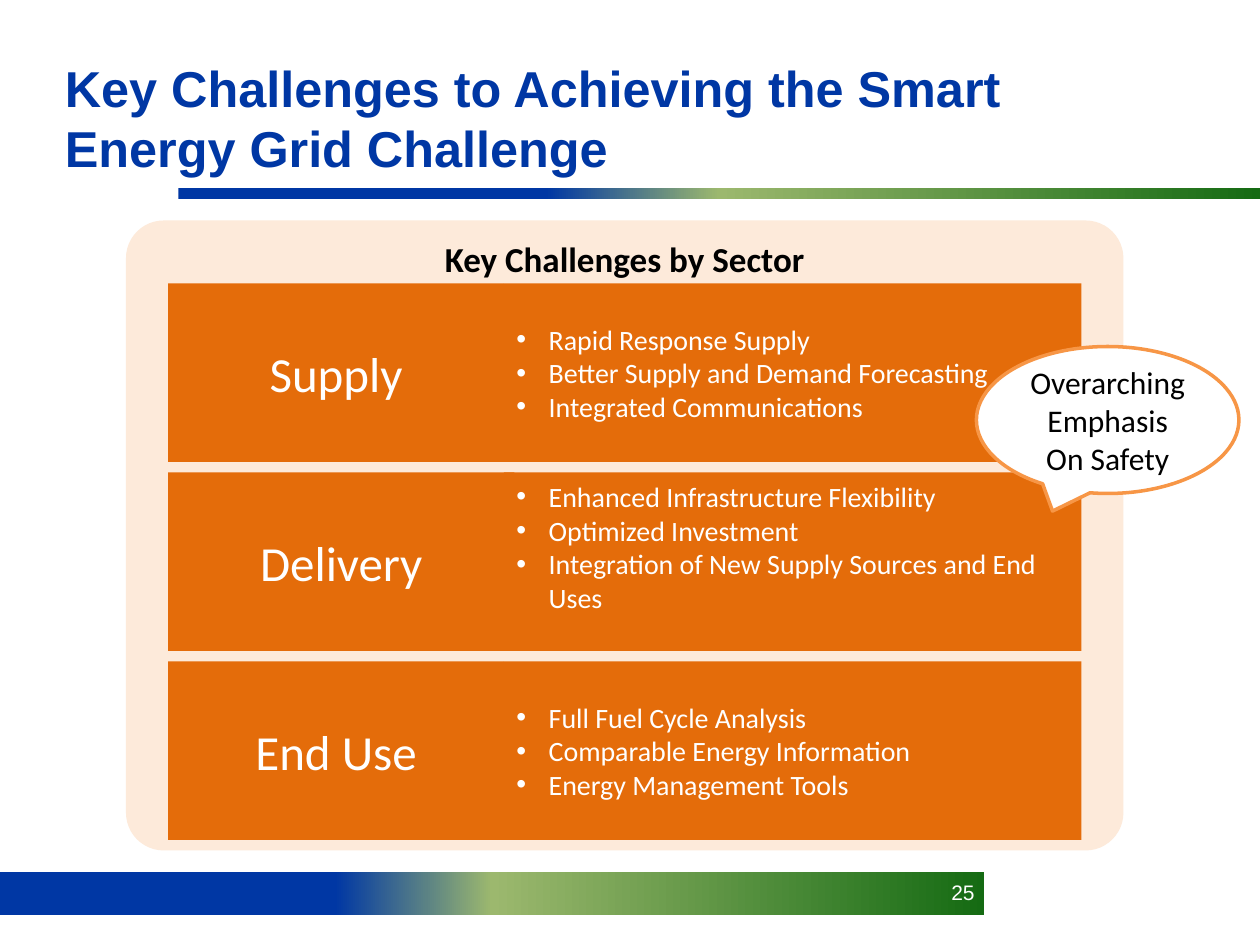
from copy import deepcopy
from dataclasses import dataclass

from lxml.etree import SubElement
from pptx import Presentation
from pptx.dml.color import RGBColor
from pptx.enum.shapes import MSO_SHAPE
from pptx.enum.text import MSO_ANCHOR, PP_ALIGN
from pptx.oxml.ns import qn
from pptx.util import Pt


@dataclass(frozen=True)
class Theme:
    heading_font: str = "Arial"
    body_font: str = "Calibri"
    blue: str = "0037A4"
    panel: str = "FDEADA"
    orange: str = "E46C0A"
    outline: str = "F79646"
    white: str = "FFFFFF"
    black: str = "000000"
    bar_stops: tuple = ((0.34, "0037A4"), (0.5, "9CB86E"), (1, "156B13"))
    title_size: float = 28.8
    sector_size: float = 28
    panel_size: float = 20
    callout_size: float = 18
    bullet_size: float = 16
    number_size: float = 12


THEME = Theme()

# Sector, label width, bullets, bottom inset of the bullets
SECTORS = [
    ("Supply", 192, ["Rapid Response Supply",
                     "Better Supply and Demand Forecasting",
                     "Integrated Communications"], 3.6),
    ("Delivery", 198, ["Enhanced Infrastructure Flexibility",
                       "Optimized Investment",
                       "Integration of New Supply Sources and End Uses"], 20.7),
    ("End Use", 192, ["Full Fuel Cycle Analysis",
                      "Comparable Energy Information",
                      "Energy Management Tools"], 3.6),
]
ROW_TOP, ROW_PITCH, ROW_HEIGHT = 162, 108, 102


def add_box(s, kind, box, fill=None, line=None):
    sp = s.shapes.add_shape(kind, *map(Pt, box))
    sp.shadow.inherit = False
    if fill:
        sp.fill.solid()
        sp.fill.fore_color.rgb = RGBColor.from_string(fill)
    if line:
        sp.line.color.rgb = RGBColor.from_string(line)
        sp.line.width = Pt(2)
    else:
        sp.line.fill.background()
    return sp


def add_gradient_bar(s, box):
    sp = add_box(s, MSO_SHAPE.RECTANGLE, box)
    sp.fill.gradient()
    sp.fill.gradient_angle = 0
    stops = sp.fill._fill._gradFill.gsLst
    stops.append(deepcopy(stops[0]))
    for stop, (position, color) in zip(sp.fill.gradient_stops, THEME.bar_stops):
        stop.position = position
        stop.color.rgb = RGBColor.from_string(color)


def set_text(sp, text, size, color, font=THEME.body_font, bold=False,
             align=PP_ALIGN.CENTER, anchor=MSO_ANCHOR.MIDDLE, bullets=False):
    tf = sp.text_frame
    tf.text = text
    tf.word_wrap = True
    tf.vertical_anchor = anchor
    for p in tf.paragraphs:
        p.alignment = align
        if bullets:
            add_bullet(p)
        for r in p.runs:
            r.font.name = font
            r.font.size = Pt(size)
            r.font.bold = bold
            r.font.color.rgb = RGBColor.from_string(color)


def add_bullet(p):
    pPr = p._p.get_or_add_pPr()
    pPr.set("marL", str(Pt(18.5)))
    pPr.set("indent", str(-Pt(18.5)))
    SubElement(pPr, qn("a:buFont")).set("typeface", "Arial")
    SubElement(pPr, qn("a:buChar")).set("char", "•")


def add_text(s, box, text, size, color, **style):
    sp = s.shapes.add_textbox(*map(Pt, box))
    set_text(sp, text, size, color, font=THEME.heading_font, **style)


def add_sector(s, top, name, label_width, bullets, bottom_inset):
    label = add_box(s, MSO_SHAPE.RECTANGLE,
                    (96, top, label_width, ROW_HEIGHT), THEME.orange)
    set_text(label, name, THEME.sector_size, THEME.white)
    detail = add_box(s, MSO_SHAPE.RECTANGLE,
                     (288, top, 330, ROW_HEIGHT), THEME.orange)
    set_text(detail, "\n".join(bullets), THEME.bullet_size, THEME.white,
             align=PP_ALIGN.LEFT, bullets=True)
    detail.text_frame.margin_bottom = Pt(bottom_inset)


def add_callout(s):
    sp = add_box(s, MSO_SHAPE.OVAL_CALLOUT, (558, 198, 150, 84),
                 THEME.white, THEME.outline)
    sp.adjustments[0] = -0.21
    sp.adjustments[1] = 0.62
    set_text(sp, "Overarching\nEmphasis\nOn Safety",
             THEME.callout_size, THEME.black)


def main():
    prs = Presentation()
    prs.slide_width, prs.slide_height = Pt(720), Pt(540)
    s = prs.slides.add_slide(prs.slide_layouts[6])

    # Footer bar, title rule and page number
    add_gradient_bar(s, (0, 498.25, 562.5, 24.75))
    add_gradient_bar(s, (102, 107.5, 618, 6.5))
    add_text(s, (396, 499, 168, 30), "25", THEME.number_size, THEME.white,
             align=PP_ALIGN.RIGHT, anchor=MSO_ANCHOR.TOP)

    # Panel and title
    panel = add_box(s, MSO_SHAPE.ROUNDED_RECTANGLE, (72, 126, 570, 360),
                    THEME.panel)
    panel.adjustments[0] = 0.06
    set_text(panel, "Key Challenges by Sector", THEME.panel_size, THEME.black,
             bold=True, anchor=MSO_ANCHOR.TOP)
    add_text(s, (30, 30, 648, 74),
             "Key Challenges to Achieving the Smart Energy Grid Challenge",
             THEME.title_size, THEME.blue, bold=True, align=PP_ALIGN.LEFT)

    # Sector rows
    for i, sector in enumerate(SECTORS):
        add_sector(s, ROW_TOP + i * ROW_PITCH, *sector)

    add_callout(s)
    prs.save("out.pptx")


if __name__ == "__main__":
    main()
